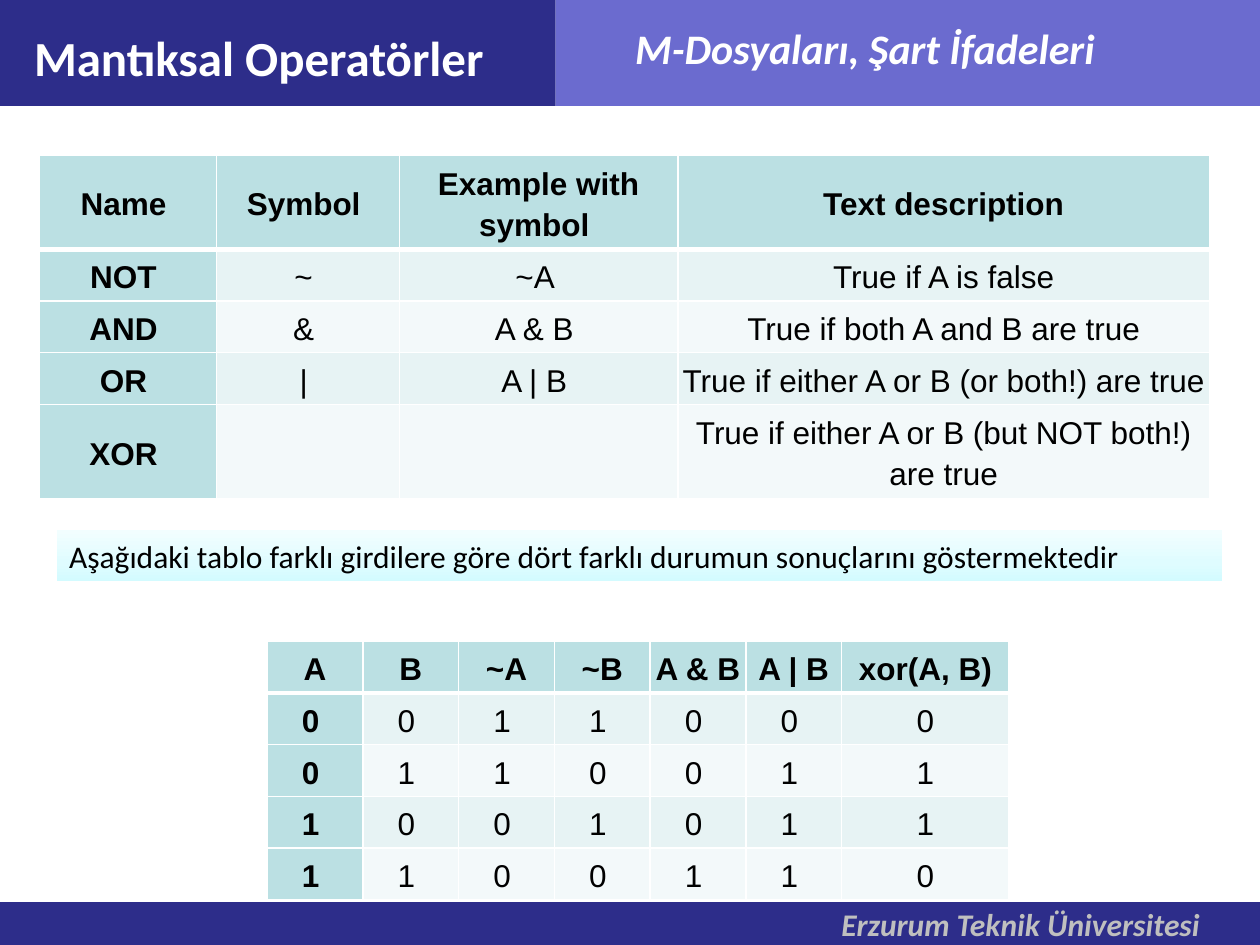
from copy import deepcopy

from lxml.etree import SubElement
from pptx import Presentation
from pptx.dml.color import RGBColor
from pptx.enum.shapes import MSO_SHAPE as Preset
from pptx.enum.text import MSO_ANCHOR as Anchor, PP_ALIGN as Align
from pptx.oxml import parse_xml
from pptx.oxml.ns import nsdecls, qn
from pptx.util import Inches, Pt

NAVY = RGBColor(0x2D, 0x2D, 0x8A)
VIOLET = RGBColor(0x6B, 0x6B, 0xCF)
WHITE = RGBColor(0xFF, 0xFF, 0xFF)
BLACK = RGBColor(0, 0, 0)
SILVER = RGBColor(0xBF, 0xBF, 0xBF)
TEAL = RGBColor(0xBB, 0xE0, 0xE3)
STRIPES = (RGBColor(0xE7, 0xF3, 0xF4), RGBColor(0xF3, 0xF9, 0xFA))
GRADIENT = ((0, RGBColor(0xD3, 0xFB, 0xFF)),
            (0.35, RGBColor(0xDF, 0xFC, 0xFF)),
            (1, RGBColor(0xF2, 0xFE, 0xFF)))

OPERATORS = (
    ("Name ", "Symbol ", "Example with symbol ", "Text description"),
    ("NOT ", "~ ", "~A ", "True if A is false"),
    ("AND ", "& ", "A & B ", "True if both A and B are true"),
    ("OR ", "| ", "A | B ", "True if either A or B (or both!) are true"),
    ("XOR ", "", "", "True if either A or B (but NOT both!) are true"),
)


def truth_rows():
    rows = [("A", "B", "~A", "~B", "A & B", "A | B", "xor(A, B)")]
    for a in (0, 1):
        for b in (0, 1):
            values = (a, b, 1 - a, 1 - b, a & b, a | b)
            rows.append([f"{value} " for value in values] + [str(a ^ b)])
    return rows


def write(text_frame, text, size, color, font="Calibri", bold=False,
          italic=False, align=Align.LEFT):
    text_frame.text = text
    paragraph = text_frame.paragraphs[0]
    paragraph.alignment = align
    for run in paragraph.runs:
        run.font.name = font
        run.font.size = Pt(size)
        run.font.bold = bold
        run.font.italic = italic
        run.font.color.rgb = color
    return paragraph


def add_rectangle(slide, box):
    shape = slide.shapes.add_shape(Preset.RECTANGLE, *map(Inches, box))
    shape.shadow.inherit = False
    shape.line.fill.background()
    return shape


def add_band(slide, box, color):
    band = add_rectangle(slide, box)
    band.fill.solid()
    band.fill.fore_color.rgb = color


def add_label(slide, box, text, size, color, align=Align.LEFT):
    label = slide.shapes.add_textbox(*map(Inches, box))
    label.text_frame.word_wrap = True
    write(label.text_frame, text, size, color, bold=True, italic=True, align=align)


def add_header(slide, left, top, width, height):
    split = 4.41
    add_band(slide, (left, top, split, height), NAVY)
    add_band(slide, (left + split, top, width - split, height), VIOLET)
    add_label(slide, (left + 3.74, top + 0.13, 6.25, 0.5),
              "M-Dosyaları, Şart İfadeleri", 24, WHITE, Align.CENTER)
    title = slide.shapes.title
    title.left, title.top = Inches(left + 0.17), Inches(top + 0.17)
    title.width, title.height = Inches(4.71), Inches(0.52)
    frame = title.text_frame
    frame.vertical_anchor = Anchor.MIDDLE
    frame.margin_bottom = 0
    write(frame, "Mantıksal Operatörler", 28, WHITE, bold=True)
    title.element.getparent().append(title.element)


def add_footer(slide, left, top, width, height):
    add_band(slide, (left, top, width, height), NAVY)
    add_label(slide, (left + 6.58, top - 0.03, 3.42, 0.4),
              "Erzurum Teknik Üniversitesi", 18, SILVER)


def add_note(slide, box, text):
    note = add_rectangle(slide, box)
    note.fill.gradient()
    note.fill.gradient_angle = 90
    stop_list = note.element.spPr.find(".//" + qn("a:gsLst"))
    stop_list.insert(1, deepcopy(stop_list[0]))
    for stop, (position, color) in zip(note.fill.gradient_stops, GRADIENT):
        stop.position = position
        stop.color.rgb = color
    note.text_frame.word_wrap = True
    write(note.text_frame, text, 18, BLACK)


def set_borders(cell, row):
    widths = {"lnL": 1, "lnR": 1,
              "lnT": 3 if row == 1 else 1, "lnB": 3 if row == 0 else 1}
    properties = cell._tc.get_or_add_tcPr()
    for index, (side, width) in enumerate(widths.items()):
        line = parse_xml(f'<a:{side} {nsdecls("a")} w="{Pt(width)}"/>')
        fill = SubElement(line, qn("a:solidFill"))
        SubElement(fill, qn("a:srgbClr"), val=str(WHITE))
        properties.insert(index, line)


def format_cell(cell, text, row, column):
    heading = row == 0 or column == 0
    cell.fill.solid()
    cell.fill.fore_color.rgb = TEAL if heading else STRIPES[(row - 1) % 2]
    cell.vertical_anchor = Anchor.MIDDLE
    cell.margin_left = cell.margin_right = Inches(0.03)
    cell.margin_top = cell.margin_bottom = Inches(0.03)
    paragraph = write(cell.text_frame, text, 18, BLACK, "Arial", heading,
                      align=Align.CENTER)
    paragraph.line_spacing = 1.15
    paragraph.space_before = paragraph.space_after = Pt(12)
    set_borders(cell, row)


def add_grid(slide, left, top, rows, widths, heights):
    box = (left, top, sum(widths), sum(heights))
    table = slide.shapes.add_table(len(rows), len(widths), *map(Inches, box)).table
    for column, width in zip(table.columns, widths):
        column.width = Inches(width)
    for row, height in zip(table.rows, heights):
        row.height = Inches(height)
    for row, texts in enumerate(rows):
        for column, text in enumerate(texts):
            format_cell(table.cell(row, column), text, row, column)


def main():
    presentation = Presentation()
    presentation.slide_width, presentation.slide_height = Inches(10), Inches(7.5)
    slide = presentation.slides.add_slide(presentation.slide_layouts[5])
    add_footer(slide, 0, 7.16, 10, 0.34)
    add_header(slide, 0, 0, 10, 0.84)
    add_grid(slide, 0.31, 1.23, OPERATORS, (1.41, 1.45, 2.21, 4.22),
             (0.75, 0.41, 0.41, 0.41, 0.75))
    add_note(slide, (0.45, 4.21, 9.25, 0.4),
             "Aşağıdaki tablo farklı girdilere göre dört farklı durumun "
             "sonuçlarını göstermektedir")
    add_grid(slide, 2.12, 5.09, truth_rows(), [0.76] * 6 + [1.33], [0.41] * 5)
    presentation.save("out.pptx")


if __name__ == "__main__":
    main()
